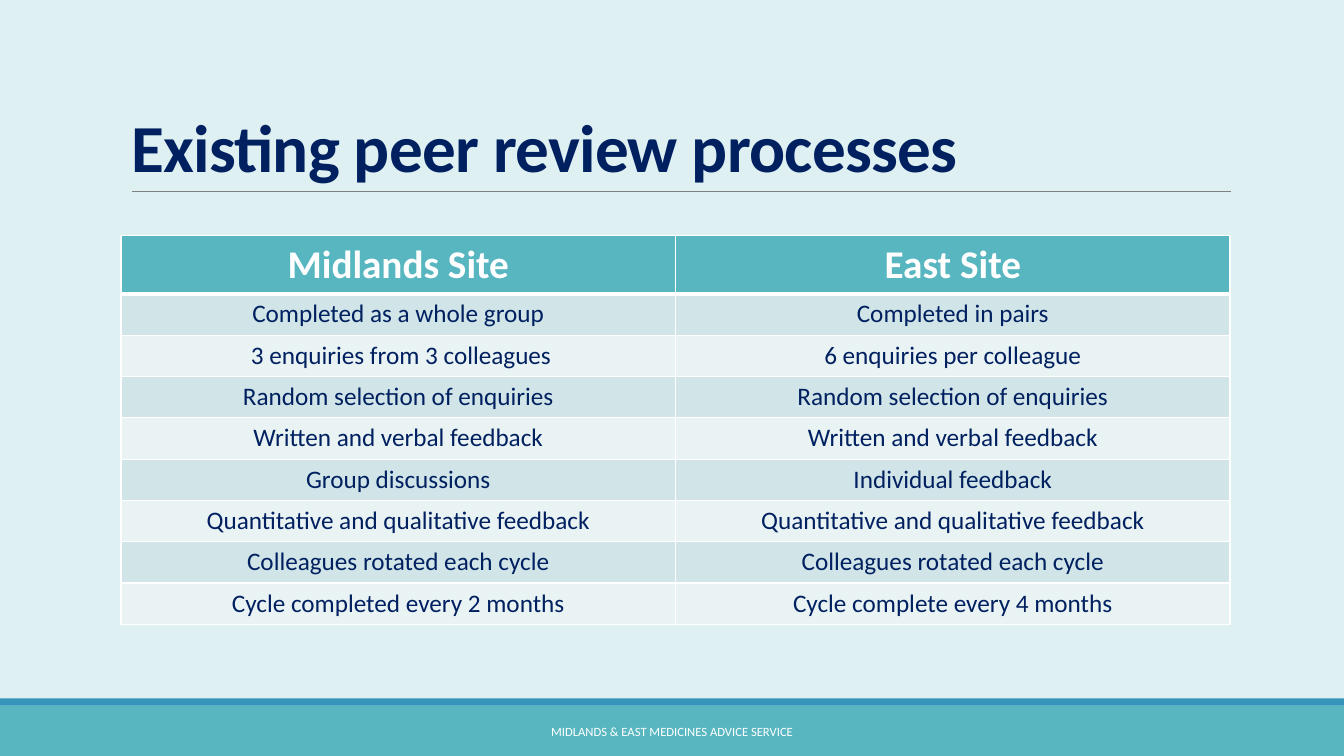
from lxml.etree import SubElement
from pptx import Presentation
from pptx.dml.color import RGBColor
from pptx.enum.shapes import MSO_CONNECTOR, MSO_SHAPE
from pptx.enum.text import MSO_ANCHOR, MSO_AUTO_SIZE, PP_ALIGN
from pptx.oxml.ns import qn
from pptx.util import Inches, Pt

# Content
TITLE = "Existing peer review processes"
FOOTER = "MIDLANDS & EAST MEDICINES ADVICE SERVICE"
ROWS = [
    ("Midlands Site", "East Site"),
    ("Completed as a whole group", "Completed in pairs"),
    (" 3 enquiries from 3 colleagues", "6 enquiries per colleague"),
    ("Random selection of enquiries", "Random selection of enquiries"),
    ("Written and verbal feedback", "Written and verbal feedback"),
    ("Group discussions", "Individual feedback"),
    ("Quantitative and qualitative feedback", "Quantitative and qualitative feedback"),
    ("Colleagues rotated each cycle", "Colleagues rotated each cycle"),
    ("Cycle completed every 2 months", "Cycle complete every 4 months"),
]
COLORS = {
    "background": "DEF0F2", "teal": "58B6C0", "blue": "3494BA", "rule": "808080",
    "navy": "002060", "white": "FFFFFF", "band_dark": "D1E5E8", "band_light": "EAF3F4",
}
FONT = "Calibri"

# Layout in inches
WIDTH, HEIGHT = 13.33, 7.5
LEFT, CONTENT_WIDTH = 1.2, 11
TITLE_TOP, RULE_TOP, TABLE_TOP = 0.31, 1.9, 2.34
HEADER_HEIGHT, ROW_HEIGHT = 0.57, 0.41
FOOTER_HEIGHT, STRIPE_HEIGHT = 0.5, 0.07


def color(name):
    return RGBColor.from_string(COLORS[name])


def add_run(para, text, size, color_name, bold=False):
    span = para.add_run()
    span.text = text
    span.font.name = FONT
    span.font.size = Pt(size)
    span.font.bold = bold
    span.font.color.rgb = color(color_name)
    return span


def add_band(slide, top, height, color_name):
    band = slide.shapes.add_shape(
        MSO_SHAPE.RECTANGLE, 0, Inches(top), Inches(WIDTH), Inches(height))
    band.shadow.inherit = False
    band.fill.solid()
    band.fill.fore_color.rgb = color(color_name)
    band.line.fill.background()


def set_borders(cell, widths):
    properties = cell._tc.get_or_add_tcPr()
    for side, width in zip("LRTB", widths):
        line = SubElement(properties, qn(f"a:ln{side}"), w=str(Pt(width)))
        fill = SubElement(line, qn("a:solidFill"))
        SubElement(fill, qn("a:srgbClr"), val=COLORS["white"])


deck = Presentation()
deck.slide_width, deck.slide_height = Inches(WIDTH), Inches(HEIGHT)
slide = deck.slides.add_slide(deck.slide_layouts[5])
slide.background.fill.solid()
slide.background.fill.fore_color.rgb = color("background")

# Footer bands
footer_top = HEIGHT - FOOTER_HEIGHT
add_band(slide, footer_top, FOOTER_HEIGHT, "teal")
add_band(slide, footer_top - STRIPE_HEIGHT, STRIPE_HEIGHT, "blue")

# Title and rule
title = slide.shapes.title
title.left, title.top = Inches(LEFT), Inches(TITLE_TOP)
title.width, title.height = Inches(CONTENT_WIDTH), Inches(RULE_TOP - TITLE_TOP)
title.text_frame.auto_size = MSO_AUTO_SIZE.NONE
title.text_frame.vertical_anchor = MSO_ANCHOR.BOTTOM
para = title.text_frame.paragraphs[0]
para.alignment = PP_ALIGN.LEFT
para.line_spacing = 0.85
span = add_run(para, TITLE, 48, "navy", bold=True)
span.font._element.set("spc", "-50")

rule = slide.shapes.add_connector(
    MSO_CONNECTOR.STRAIGHT, Inches(LEFT + 0.11), Inches(RULE_TOP),
    Inches(LEFT + CONTENT_WIDTH + 0.01), Inches(RULE_TOP))
rule.line.color.rgb = color("rule")
rule.line.width = Pt(0.5)
SubElement(rule._element.spPr, qn("a:effectLst"))

# Comparison table
table_height = HEADER_HEIGHT + ROW_HEIGHT * (len(ROWS) - 1)
table = slide.shapes.add_table(
    len(ROWS), len(ROWS[0]), Inches(LEFT), Inches(TABLE_TOP),
    Inches(CONTENT_WIDTH), Inches(table_height)).table
for row_index, texts in enumerate(ROWS):
    is_header = row_index == 0
    table.rows[row_index].height = Inches(HEADER_HEIGHT if is_header else ROW_HEIGHT)
    band = "teal" if is_header else ("band_light", "band_dark")[row_index % 2]
    top_width = 3 if row_index == 1 else 1
    bottom_width = 3 if is_header else 1
    for column_index, text in enumerate(texts):
        cell = table.cell(row_index, column_index)
        set_borders(cell, (1, 1, top_width, bottom_width))
        cell.fill.solid()
        cell.fill.fore_color.rgb = color(band)
        para = cell.text_frame.paragraphs[0]
        para.alignment = PP_ALIGN.CENTER
        add_run(para, text, 28 if is_header else 18,
                "white" if is_header else "navy", bold=is_header)

# Footer text
box = slide.shapes.add_textbox(
    Inches(4.03), Inches(footer_top + 0.06), Inches(5.27), Inches(0.4))
box.text_frame.word_wrap = True
box.text_frame.vertical_anchor = MSO_ANCHOR.MIDDLE
para = box.text_frame.paragraphs[0]
para.alignment = PP_ALIGN.CENTER
add_run(para, FOOTER, 9, "white")

deck.save("out.pptx")
